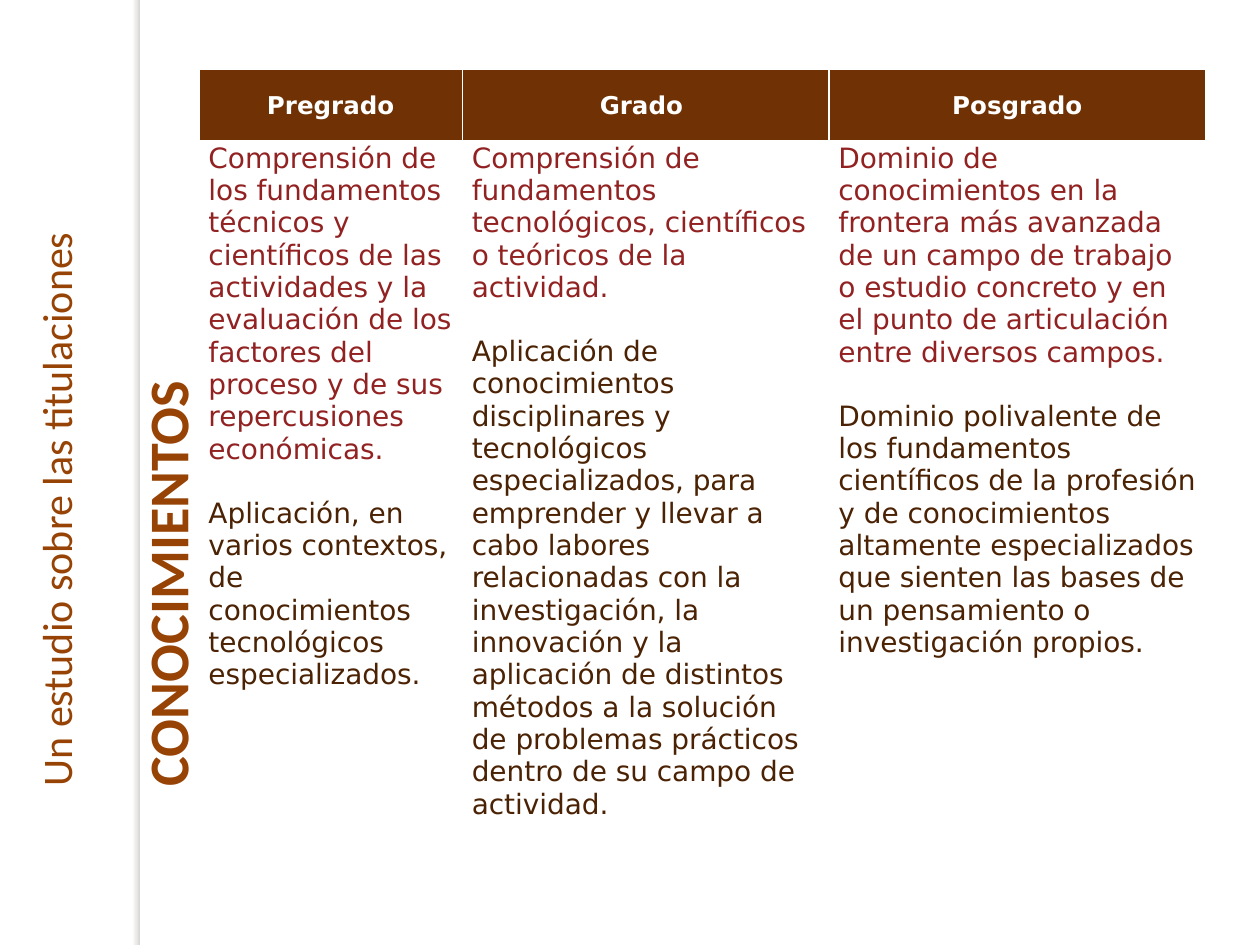
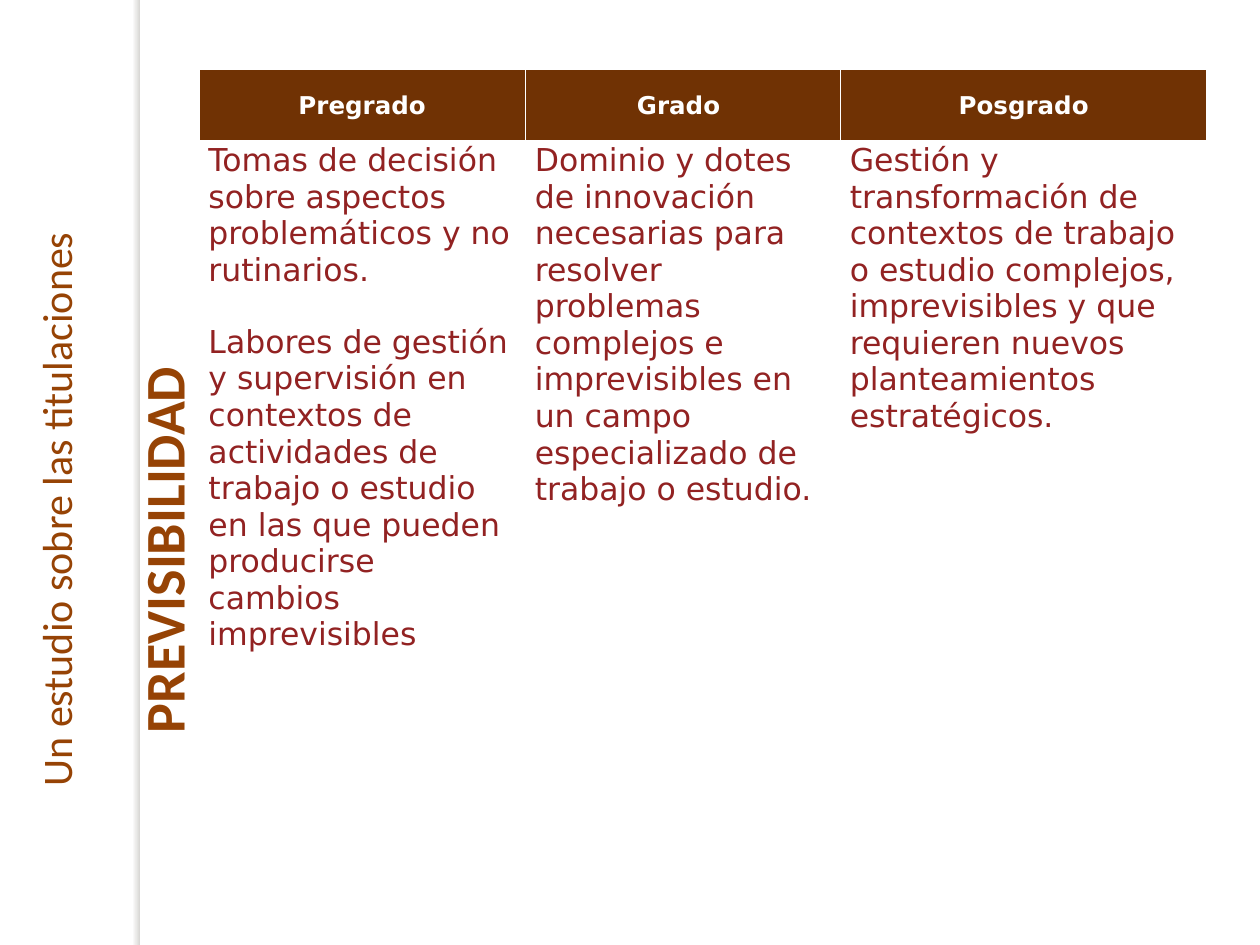
from dataclasses import dataclass

from lxml import etree
from pptx import Presentation
from pptx.dml.color import RGBColor
from pptx.enum.shapes import MSO_SHAPE
from pptx.enum.text import MSO_ANCHOR, MSO_AUTO_SIZE, PP_ALIGN
from pptx.oxml.ns import qn
from pptx.util import Inches, Pt

RECTANGLE = MSO_SHAPE.RECTANGLE
TOP, MIDDLE = MSO_ANCHOR.TOP, MSO_ANCHOR.MIDDLE
LEFT, CENTER = PP_ALIGN.LEFT, PP_ALIGN.CENTER
NO_AUTOFIT = MSO_AUTO_SIZE.NONE
TITLE_ONLY = 5


@dataclass(frozen=True)
class Theme:
    white: str = "FFFFFF"
    heading: str = "964305"
    header_fill: str = "703204"
    accent: str = "922222"
    body: str = "4B2203"
    shade: str = "D9D8D5"
    heading_font: str = "Calibri"
    table_font: str = "DejaVu Sans"
    study_size: int = 24
    title_size: int = 32
    header_size: int = 14
    paragraph_gap: float = 1.13


THEME = Theme()
STUDY = "Un estudio sobre las titulaciones"
LEVELS = ["Pregrado", "Grado ", "Posgrado"]
ROW_HEIGHTS = [0.58, 5.53]
CELL_MARGIN = Pt(5.4)

# Each cell is a list of (text, colour) paragraphs
KNOWLEDGE = [
    [("Comprensión de los fundamentos técnicos y científicos de las actividades y la "
      "evaluación de los factores del proceso y de sus repercusiones económicas.", THEME.accent),
     ("Aplicación, en varios contextos, de conocimientos tecnológicos especializados.",
      THEME.body)],
    [("Comprensión de fundamentos tecnológicos, científicos o teóricos de la actividad.",
      THEME.accent),
     ("Aplicación de conocimientos disciplinares y tecnológicos especializados, para emprender "
      "y llevar a cabo labores relacionadas con la investigación, la innovación y la aplicación "
      "de distintos métodos a la solución de problemas prácticos dentro de su campo de "
      "actividad.", THEME.body)],
    [("Dominio de conocimientos en la frontera más avanzada de un campo de trabajo o estudio "
      "concreto y en el punto de articulación entre diversos campos.", THEME.accent),
     ("Dominio polivalente de los fundamentos científicos de la profesión y de conocimientos "
      "altamente especializados que sienten las bases de un pensamiento o investigación "
      "propios.", THEME.body)],
]
PREDICTABILITY = [
    [("Tomas de decisión sobre aspectos problemáticos y no rutinarios.", THEME.accent),
     ("Labores de gestión y supervisión en contextos de actividades de trabajo o estudio en "
      "las que pueden producirse cambios imprevisibles", THEME.accent)],
    [("Dominio y dotes de innovación necesarias para resolver problemas complejos e "
      "imprevisibles en un campo especializado de trabajo o estudio.", THEME.accent)],
    [("Gestión y transformación de contextos de trabajo o estudio complejos, imprevisibles y "
      "que requieren nuevos planteamientos estratégicos.", THEME.accent)],
]


def set_format(target, values):
    for name, value in values.items():
        setattr(target, name, value)


def write_para(para, text, color, align=LEFT, **font):
    para.alignment = align
    span = para.add_run()
    span.text = text
    set_format(span.font, font)
    span.font.color.rgb = RGBColor.from_string(color)


# Shared parts
def add_side_shade(page):
    """Draw the soft edge that separates the side heading from the content."""
    shade = page.shapes.add_shape(RECTANGLE, Inches(1.05), 0, Inches(0.06), Inches(7.5))
    shade.shadow.inherit = False
    shade.line.fill.background()
    shade.fill.gradient()
    shade.fill.gradient_angle = 0
    for stop, color in zip(shade.fill.gradient_stops, (THEME.white, THEME.shade)):
        stop.color.rgb = RGBColor.from_string(color)


def set_upright_text(box, place, text, **font):
    """Place a box turned to read upwards and write one line in it."""
    left, top, width, height = map(Inches, place)
    set_format(box, dict(left=left, top=top, width=width, height=height, rotation=270))
    set_format(box.text_frame, dict(word_wrap=True, auto_size=NO_AUTOFIT, vertical_anchor=TOP))
    write_para(box.text_frame.paragraphs[0], text, THEME.heading,
               name=THEME.heading_font, **font)


# Table
def style_cell(cell, fill, anchor, bottom_width=1):
    set_format(cell, dict(margin_left=CELL_MARGIN, margin_right=CELL_MARGIN,
                          margin_top=0, margin_bottom=0, vertical_anchor=anchor))
    properties = cell._tc.get_or_add_tcPr()
    for side, width in dict(L=1, R=1, T=1, B=bottom_width).items():
        border = etree.SubElement(properties, qn(f"a:ln{side}"), w=str(Pt(width)))
        paint = etree.SubElement(border, qn("a:solidFill"))
        etree.SubElement(paint, qn("a:srgbClr"), val=THEME.white)
    cell.fill.solid()
    cell.fill.fore_color.rgb = RGBColor.from_string(fill)


def add_level_table(page, column_widths, contents, size):
    frame = page.shapes.add_table(2, len(LEVELS), Inches(1.58), Inches(0.55),
                                  Inches(sum(column_widths)), Inches(sum(ROW_HEIGHTS)))
    table = frame.table
    table.horz_banding = False
    for row, height in zip(table.rows, ROW_HEIGHTS):
        row.height = Inches(height)
    for index, (level, width, paragraphs) in enumerate(zip(LEVELS, column_widths, contents)):
        table.columns[index].width = Inches(width)
        header, body = table.cell(0, index), table.cell(1, index)
        style_cell(header, THEME.header_fill, MIDDLE, bottom_width=3)
        write_para(header.text_frame.paragraphs[0], level, THEME.white, CENTER,
                   name=THEME.table_font, size=Pt(THEME.header_size), bold=True)
        style_cell(body, THEME.white, TOP)
        for number, (text, color) in enumerate(paragraphs):
            para = body.text_frame.add_paragraph() if number else body.text_frame.paragraphs[0]
            para.space_before = Pt(size * THEME.paragraph_gap) if number else Pt(0)
            write_para(para, text, color, name=THEME.table_font, size=Pt(size), bold=False)


def add_level_page(deck, title, title_place, column_widths, contents, size):
    page = deck.slides.add_slide(deck.slide_layouts[TITLE_ONLY])
    add_side_shade(page)
    study_box = page.shapes.add_textbox(0, 0, 0, 0)
    set_upright_text(study_box, (-1.78, 3.56, 4.75, 0.81), STUDY, size=Pt(THEME.study_size))
    set_upright_text(page.shapes.title, title_place, title,
                     size=Pt(THEME.title_size), bold=True)
    add_level_table(page, column_widths, contents, size)


def main():
    deck = Presentation()
    deck.slide_width, deck.slide_height = Inches(10), Inches(7.5)
    add_level_page(deck, "CONOCIMIENTOS", (-0.82, 3.58, 4.58, 0.94),
                   [2.09, 2.91, 2.99], KNOWLEDGE, 16)
    add_level_page(deck, "PREVISIBILIDAD", (-0.85, 3.16, 4.58, 0.94),
                   [2.59, 2.5, 2.91], PREDICTABILITY, 18)
    deck.save("out.pptx")


if __name__ == "__main__":
    main()
